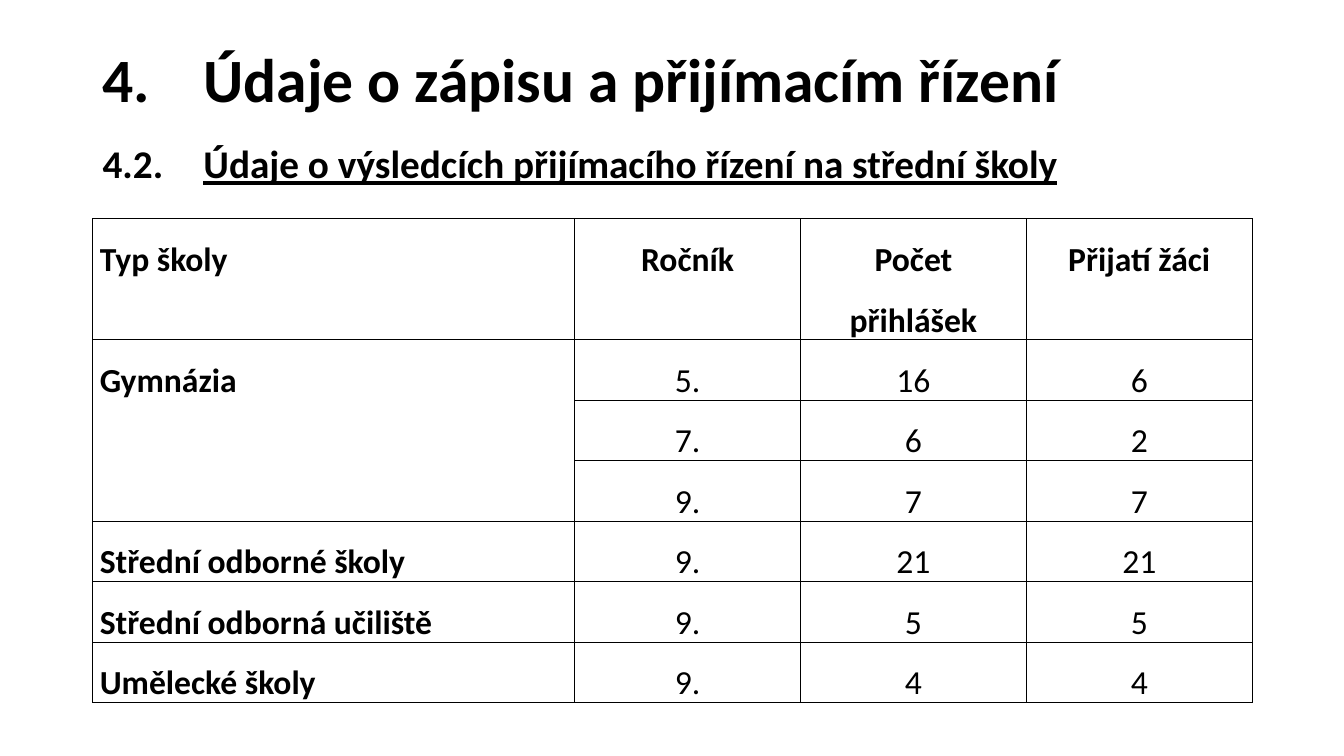
from lxml.etree import SubElement
from pptx import Presentation
from pptx.dml.color import RGBColor
from pptx.enum.text import MSO_ANCHOR, PP_ALIGN
from pptx.oxml.ns import qn
from pptx.util import Inches, Pt

LEFT, WIDTH = 0.92, 11.5
COLUMN_WIDTHS = [4.78, 2.24, 2.24, 2.24]
ROW_HEIGHT = 0.53
ADMISSIONS = [
    ["Typ školy", "Ročník", "Počet přihlášek", "Přijatí žáci"],
    ["Gymnázia", "5.", "16", "6"],
    ["", "7.", "6", "2"],
    ["", "9.", "7", "7"],
    ["Střední odborné školy", "9.", "21", "21"],
    ["Střední odborná učiliště", "9.", "5", "5"],
    ["Umělecké školy", "9.", "4", "4"],
]


def rgb(color):
    return RGBColor.from_string(color)


class SlideBuilder:
    font = "Calibri"
    ink = "000000"

    def __init__(self, prs):
        self.slide = prs.slides.add_slide(prs.slide_layouts[6])

    def style_run(self, r, size, bold):
        r.font.name = self.font
        r.font.size = Pt(size)
        r.font.bold = bold
        r.font.color.rgb = rgb(self.ink)

    def heading(self, number, text, top, height, size, anchor, before=0, underline=False):
        """Add a numbered heading whose text starts at the next tab stop."""
        box = self.slide.shapes.add_textbox(
            Inches(LEFT), Inches(top), Inches(WIDTH), Inches(height))
        tf = box.text_frame
        tf.word_wrap = True
        tf.vertical_anchor = anchor
        p = tf.paragraphs[0]
        p.line_spacing = 0.9
        p.space_before = Pt(before)
        for part in (f"{number} \t", text):
            r = p.add_run()
            r.text = part
            self.style_run(r, size, True)
        r.font.underline = underline

    def border(self, cell):
        props = cell._tc.get_or_add_tcPr()
        for side in ("a:lnL", "a:lnR", "a:lnT", "a:lnB"):
            line = SubElement(props, qn(side), w=str(Pt(1)))
            fill = SubElement(line, qn("a:solidFill"))
            SubElement(fill, qn("a:srgbClr"), val=self.ink)

    def cell(self, cell, text, bold, align):
        cell.margin_left = cell.margin_right = Inches(0.07)
        cell.margin_top = cell.margin_bottom = 0
        self.border(cell)
        cell.fill.background()
        cell.text_frame.text = text
        p = cell.text_frame.paragraphs[0]
        p.alignment = align
        p.line_spacing = 1.5
        for r in p.runs:
            self.style_run(r, 24, bold)

    def table(self, rows, top):
        table = self.slide.shapes.add_table(
            len(rows), len(COLUMN_WIDTHS), Inches(LEFT), Inches(top),
            Inches(WIDTH), Inches(ROW_HEIGHT * len(rows))).table
        table.first_row = table.horz_banding = False
        for column, width in zip(table.columns, COLUMN_WIDTHS):
            column.width = Inches(width)
        for i, values in enumerate(rows):
            table.rows[i].height = Inches(ROW_HEIGHT)
            for j, value in enumerate(values):
                align = PP_ALIGN.CENTER if j else PP_ALIGN.JUSTIFY
                self.cell(table.cell(i, j), value, i == 0 or j == 0, align)
        return table


def main():
    prs = Presentation()
    prs.slide_width, prs.slide_height = Inches(13.33), Inches(7.5)
    s = SlideBuilder(prs)
    s.heading("4.", "Údaje o zápisu a přijímacím řízení",
              0.42, 0.8, 44, MSO_ANCHOR.MIDDLE)
    s.heading("4.2.", "Údaje o výsledcích přijímacího řízení na střední školy",
              1.39, 5.2, 28, MSO_ANCHOR.TOP, before=10, underline=True)
    table = s.table(ADMISSIONS, 2.17)
    table.cell(1, 0).merge(table.cell(3, 0))
    prs.save("out.pptx")


if __name__ == "__main__":
    main()
